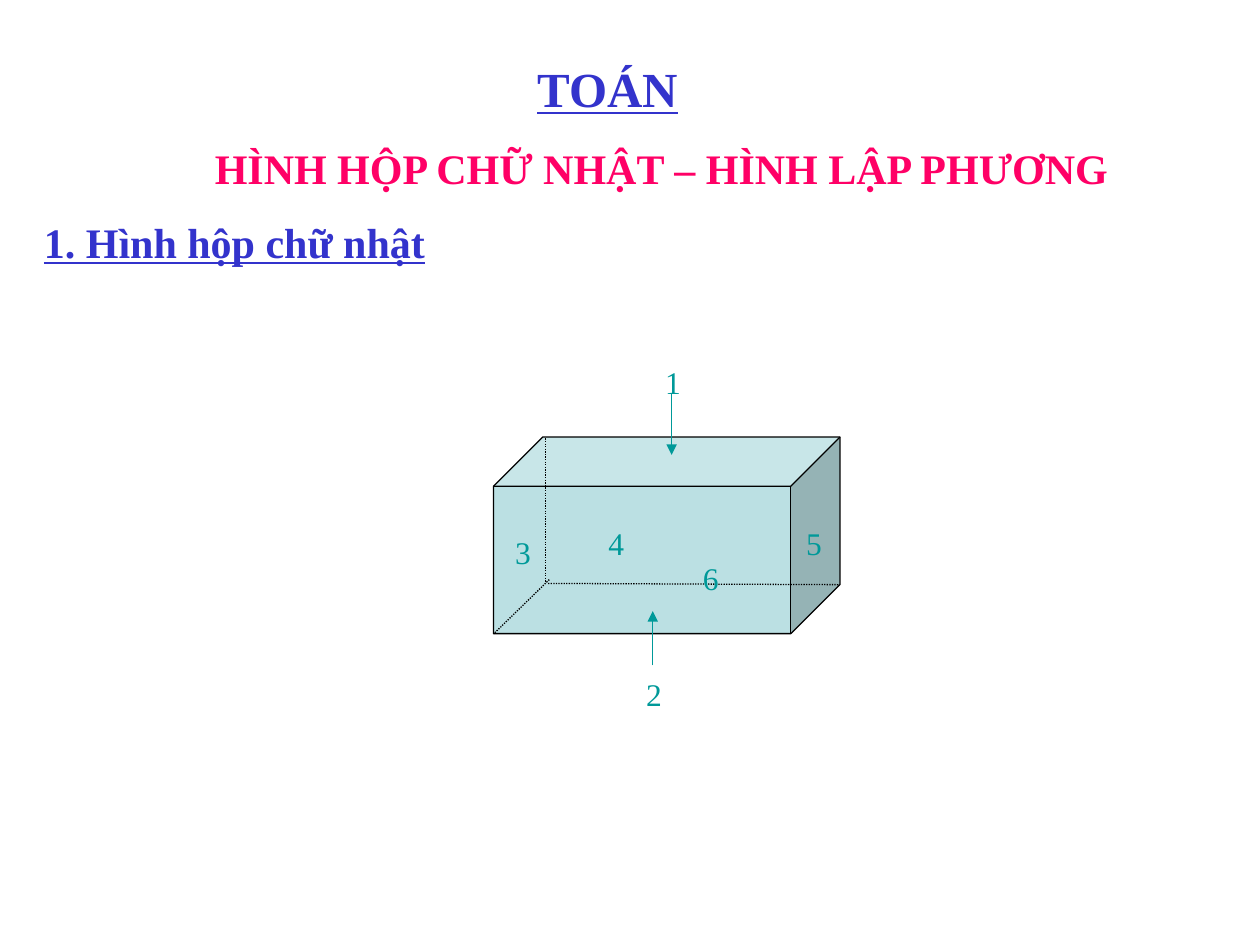
from lxml.etree import SubElement
from pptx import Presentation
from pptx.dml.color import RGBColor
from pptx.enum.dml import MSO_LINE_DASH_STYLE as Dash
from pptx.enum.shapes import MSO_CONNECTOR as Connector, MSO_SHAPE as Preset
from pptx.enum.text import MSO_AUTO_SIZE as AutoSize, PP_ALIGN as Align
from pptx.oxml.ns import qn
from pptx.util import Pt

THEME = {
    "font": "Times New Roman",
    "blue": RGBColor.from_string("3333CC"),
    "pink": RGBColor.from_string("FF0066"),
    "teal": RGBColor.from_string("009999"),
    "black": RGBColor.from_string("000000"),
    "box": RGBColor.from_string("BBE0E3"),
    "subject": 28,
    "heading": 24,
    "label": 18,
    "line": 0.75,
}

HEADINGS = [
    ("1. Hình hộp chữ nhật", (18, 120, 342, 36.7), "heading", "blue", True, Align.LEFT),
    ("HÌNH HỘP CHỮ NHẬT – HÌNH LẬP PHƯƠNG", (108, 78, 540, 36.7), "heading", "pink", False, Align.CENTER),
    ("TOÁN", (300, 30, 108, 41), "subject", "blue", True, Align.LEFT),
]
CUBOID = (282, 249.8, 198, 112.3)
HIDDEN_EDGES = [
    (311.8, 250.5, 311.8, 332.6),
    (313.2, 333.4, 479.5, 334.1),
    (313.9, 331.2, 282.2, 362.1),
]
FACE_LABELS = {
    "3": (287.3, 301),
    "6": (394.6, 316),
    "4": (340.6, 296),
    "5": (453.6, 296),
    "1": (373, 203.8),
    "2": (362.2, 382.3),
}
LABEL_SIZE = (26.6, 28.8)
ARROWS = [(373, 380.2, 373, 349.2), (383.8, 225.4, 383.8, 259.9)]


def points(values):
    return [Pt(value) for value in values]


def add_text(shapes, text, box, size, color, bold=False, underline=False, align=Align.LEFT):
    frame = shapes.add_textbox(*points(box)).text_frame
    frame.word_wrap = True
    frame.auto_size = AutoSize.SHAPE_TO_FIT_TEXT
    paragraph = frame.paragraphs[0]
    paragraph.text = text
    paragraph.alignment = align
    font = paragraph.font
    font.name = THEME["font"]
    font.size = Pt(THEME[size])
    font.bold = bold
    font.underline = underline
    font.color.rgb = THEME[color]


def add_line(shapes, ends, color, dash=None, arrow=False):
    connector = shapes.add_connector(Connector.STRAIGHT, *points(ends))
    connector.line.color.rgb = THEME[color]
    connector.line.width = Pt(THEME["line"])
    if dash:
        connector.line.dash_style = dash
    properties = connector._element.spPr
    if arrow:
        SubElement(properties.find(qn("a:ln")), qn("a:tailEnd"), type="triangle")
    SubElement(properties, qn("a:effectLst"))


def add_cuboid(shapes):
    shape = shapes.add_shape(Preset.CUBE, *points(CUBOID))
    shape.adjustments[0] = 0.25
    shape.shadow.inherit = False
    shape.fill.solid()
    shape.fill.fore_color.rgb = THEME["box"]
    shape.line.color.rgb = THEME["black"]
    shape.line.width = Pt(THEME["line"])


def main():
    presentation = Presentation()
    presentation.slide_width, presentation.slide_height = Pt(720), Pt(540)
    slide = presentation.slides.add_slide(presentation.slide_layouts[6])

    figure = slide.shapes.add_group_shape().shapes
    add_cuboid(figure)
    for edge in HIDDEN_EDGES:
        add_line(figure, edge, "black", dash=Dash.ROUND_DOT)
    for text, corner in FACE_LABELS.items():
        add_text(figure, text, corner + LABEL_SIZE, "label", "teal")
    for arrow in ARROWS:
        add_line(figure, arrow, "teal", arrow=True)

    for text, box, size, color, underline, align in HEADINGS:
        add_text(slide.shapes, text, box, size, color, True, underline, align)

    presentation.save("out.pptx")


if __name__ == "__main__":
    main()
